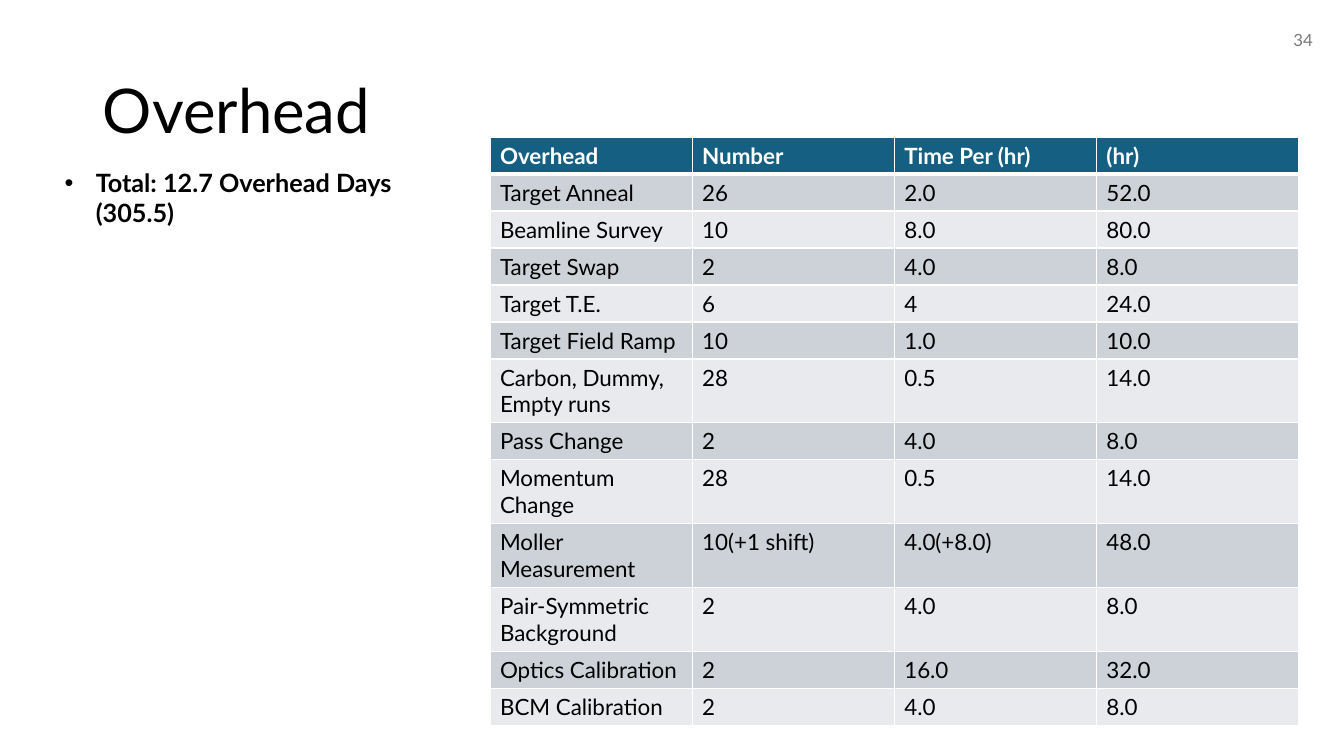
from pptx import Presentation
from pptx.dml.color import RGBColor
from pptx.enum import text
from pptx.oxml import ns, xmlchemy
from pptx.util import Inches, Pt

BLACK = RGBColor(0x00, 0x00, 0x00)
WHITE = RGBColor(0xFF, 0xFF, 0xFF)
GRAY = RGBColor(0x79, 0x79, 0x79)
HEADER = RGBColor(0x15, 0x60, 0x82)
BANDS = RGBColor(0xCC, 0xD2, 0xD8), RGBColor(0xE8, 0xEA, 0xED)

ROWS = [
    ("Overhead", "Number", "Time Per (hr)", "(hr)"),
    ("Target Anneal", "26", "2.0", "52.0"),
    ("Beamline Survey", "10", "8.0", "80.0"),
    ("Target Swap", "2", "4.0", "8.0"),
    ("Target T.E.", "6", "4", "24.0"),
    ("Target Field Ramp", "10", "1.0", "10.0"),
    ("Carbon, Dummy, Empty runs", "28", "0.5", "14.0"),
    ("Pass Change", "2", "4.0", "8.0"),
    ("Momentum Change", "28", "0.5", "14.0"),
    ("Moller Measurement", "10(+1 shift)", "4.0(+8.0)", "48.0"),
    ("Pair-Symmetric Background", "2", "4.0", "8.0"),
    ("Optics Calibration", "2", "16.0", "32.0"),
    ("BCM Calibration", "2", "4.0", "8.0"),
]
TWO_LINE_ROWS = {6, 8, 9, 10}


def place(sp, box):
    for name, value in zip(("left", "top", "width", "height"), box):
        setattr(sp, name, Inches(value))


def write(tf, words, size, color, bold=False, frame=None, para=None):
    for name, value in (frame or {}).items():
        setattr(tf, name, value)
    p = tf.paragraphs[0]
    for name, value in {"alignment": text.PP_ALIGN.LEFT, **(para or {})}.items():
        setattr(p, name, value)
    r = p.add_run()
    r.text = words
    for name, value in {"name": "Lato", "size": Pt(size), "bold": bold}.items():
        setattr(r.font, name, value)
    r.font.color.rgb = color
    return p


def add_title(s, box):
    sp = s.shapes.title
    place(sp, box)
    frame = {"vertical_anchor": text.MSO_ANCHOR.MIDDLE, "auto_size": text.MSO_AUTO_SIZE.NONE}
    write(sp.text_frame, "Overhead", 44, BLACK, frame=frame, para={"line_spacing": 0.9})


def add_total(s, box):
    sp = s.placeholders[1]
    place(sp, box)
    frame = {"vertical_anchor": text.MSO_ANCHOR.TOP, "word_wrap": True,
             "auto_size": text.MSO_AUTO_SIZE.SHAPE_TO_FIT_TEXT}
    p = write(sp.text_frame, "Total: 12.7 Overhead Days (305.5)", 18, BLACK, True,
              frame, {"space_before": Pt(0)})
    pPr = p._p.get_or_add_pPr()
    pPr.set("marL", str(Inches(0.31)))
    pPr.set("indent", str(-Inches(0.31)))
    xmlchemy.OxmlElement("a:buFont")
    bullet = xmlchemy.OxmlElement("a:buChar")
    bullet.set("char", "•")
    pPr.append(bullet)


def add_border(tcPr, side, width):
    ln = xmlchemy.OxmlElement(f"a:ln{side}")
    ln.set("w", str(Pt(width)))
    fill = xmlchemy.OxmlElement("a:solidFill")
    color = xmlchemy.OxmlElement("a:srgbClr")
    color.set("val", str(WHITE))
    fill.append(color)
    ln.append(fill)
    tcPr.insert(len(tcPr.findall(ns.qn("a:ln" + side))) + "LRTB".index(side), ln)


def add_overhead_table(s, box):
    left, top, width, height = (Inches(v) for v in box)
    table = s.shapes.add_table(len(ROWS), len(ROWS[0]), left, top, width, height).table
    for i, row in enumerate(ROWS):
        table.rows[i].height = Inches(0.63 if i in TWO_LINE_ROWS else 0.36)
        for j, words in enumerate(row):
            cell = table.cell(i, j)
            header = i == 0
            cell.fill.solid()
            cell.fill.fore_color.rgb = HEADER if header else BANDS[(i - 1) % 2]
            write(cell.text_frame, words, 16, WHITE if header else BLACK, header)
            for side in "LRTB":
                thick = (i, side) in ((0, "B"), (1, "T"))
                add_border(cell._tc.get_or_add_tcPr(), side, 3 if thick else 1)


def add_page_number(s, box):
    sp = s.shapes.add_textbox(*(Inches(v) for v in box))
    frame = {"vertical_anchor": text.MSO_ANCHOR.MIDDLE, "word_wrap": True}
    write(sp.text_frame, "34", 12, GRAY, frame=frame,
          para={"alignment": text.PP_ALIGN.RIGHT})


def main():
    prs = Presentation()
    prs.slide_width, prs.slide_height = Inches(13.33), Inches(7.5)
    s = prs.slides.add_slide(prs.slide_layouts[1])
    add_title(s, (0.92, 0.4, 11.5, 1.45))
    add_overhead_table(s, (4.86, 1.36, 8.02, 5.83))
    add_total(s, (0.54, 1.61, 4.18, 1.01))
    add_page_number(s, (10.12, 0.2, 3, 0.4))
    prs.save("out.pptx")


if __name__ == "__main__":
    main()
